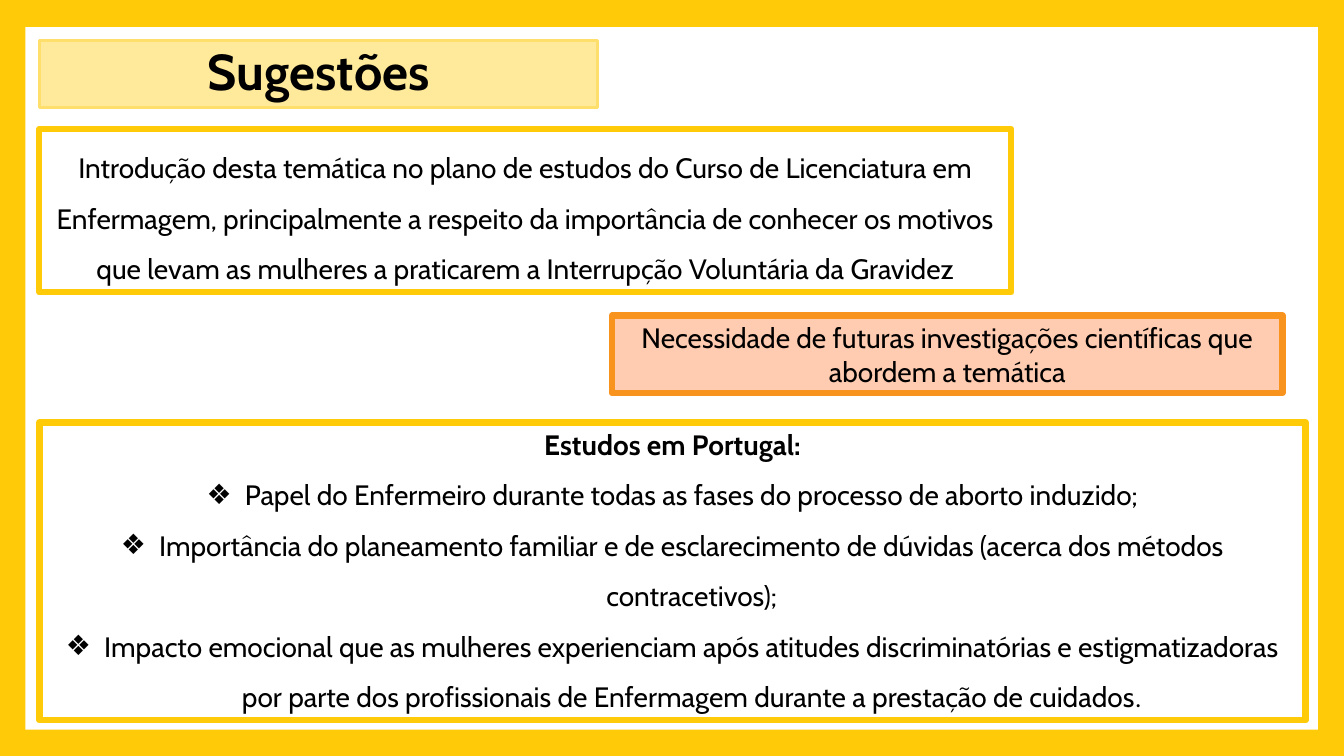
from lxml.etree import SubElement
from pptx import Presentation
from pptx.dml.color import RGBColor
from pptx.enum.shapes import MSO_SHAPE
from pptx.enum.text import MSO_ANCHOR, MSO_AUTO_SIZE, PP_ALIGN
from pptx.oxml.ns import qn
from pptx.util import Inches, Pt

AMBER = RGBColor(0xFF, 0xCA, 0x08)
CREAM = RGBColor(0xFF, 0xEA, 0x9C)
SAND = RGBColor(0xFF, 0xDF, 0x6B)
PEACH = RGBColor(0xFF, 0xCC, 0xB1)
ORANGE = RGBColor(0xF8, 0x93, 0x1D)
WHITE = RGBColor(0xFF, 0xFF, 0xFF)
BLACK = RGBColor(0x00, 0x00, 0x00)

BODY = {"name": "Cabin", "size": Pt(20), "bold": False}
HEADING = BODY | {"bold": True}
TITLE = HEADING | {"size": Pt(36)}
FULL_STOP = BODY | {"name": "Calibri", "size": Pt(18)}

INTRO = ("Introdução desta temática no plano de estudos do Curso de Licenciatura em "
         "Enfermagem, principalmente a respeito da importância de conhecer os motivos "
         "que levam as mulheres a praticarem a Interrupção Voluntária da Gravidez")
NEED = "Necessidade de futuras investigações científicas que abordem a temática"
STUDIES = [
    "Papel do Enfermeiro durante todas as fases do processo de aborto induzido;",
    "Importância do planeamento familiar e de esclarecimento de dúvidas "
    "(acerca dos métodos contracetivos);",
    "Impacto emocional que as mulheres experienciam após atitudes discriminatórias e "
    "estigmatizadoras por parte dos profissionais de Enfermagem durante a prestação "
    "de cuidados",
]


def set_format(obj, values):
    for name, value in values.items():
        setattr(obj, name, value)


def place(sp, prs, left, top, width, height):
    """Position a shape by percentages of the slide's size."""
    w, h = prs.slide_width, prs.slide_height
    set_format(sp, {"left": int(w * left / 100), "top": int(h * top / 100),
                    "width": int(w * width / 100), "height": int(h * height / 100)})


def paint(sp, fill, line=None, weight=4.5):
    sp.fill.solid()
    sp.fill.fore_color.rgb = fill
    if line is None:
        sp.line.fill.background()
    else:
        sp.line.color.rgb = line
        sp.line.width = Pt(weight)


def add_rectangle(prs, slide, share):
    sp = slide.shapes.add_shape(MSO_SHAPE.RECTANGLE, 0, 0, 0, 0)
    sp.shadow.inherit = False
    place(sp, prs, *share)
    return sp


def set_frame(sp, anchor=MSO_ANCHOR.TOP):
    set_format(sp.text_frame, {"word_wrap": True, "vertical_anchor": anchor,
                               "auto_size": MSO_AUTO_SIZE.NONE})


def set_bullet(p, char=None):
    pPr = p._p.get_or_add_pPr()
    indent = Inches(0.38) if char else 0
    pPr.set("marL", str(indent))
    pPr.set("indent", str(-indent))
    if char:
        SubElement(pPr, qn("a:buChar")).set("char", char)
    else:
        SubElement(pPr, qn("a:buNone"))


def write(p, text, font, spacing=1.0):
    set_format(p, {"alignment": PP_ALIGN.CENTER, "line_spacing": spacing,
                   "space_before": Pt(0)})
    r = p.add_run()
    r.text = text
    set_format(r.font, font)
    r.font.color.rgb = BLACK


def add_note(prs, slide, share, fill, line, text, spacing=1.0):
    sp = add_rectangle(prs, slide, share)
    paint(sp, fill, line)
    set_frame(sp)
    write(sp.text_frame.paragraphs[0], text, BODY, spacing)


def fill_title(prs, sp):
    place(sp, prs, 2.93, 5.33, 41.56, 8.93)
    paint(sp, CREAM, SAND, 2.25)
    set_frame(sp, MSO_ANCHOR.MIDDLE)
    write(sp.text_frame.paragraphs[0], "Sugestões", TITLE, 0.9)


def fill_studies(prs, sp):
    place(sp, prs, 2.93, 55.87, 94.22, 39.4)
    paint(sp, WHITE, AMBER)
    set_frame(sp)
    tf = sp.text_frame
    p = tf.paragraphs[0]
    set_bullet(p)
    write(p, "Estudos em Portugal:", HEADING)
    for study in STUDIES:
        p = tf.add_paragraph()
        set_bullet(p, "❖")
        write(p, study, BODY, 1.5)
    write(p, ".", FULL_STOP, 1.5)


def main():
    prs = Presentation()
    prs.slide_width, prs.slide_height = Inches(13.33), Inches(7.5)
    slide = prs.slides.add_slide(prs.slide_layouts[1])
    slide.background.fill.solid()
    slide.background.fill.fore_color.rgb = AMBER

    title, studies = slide.placeholders
    panel = add_rectangle(prs, slide, (1.88, 3.6, 96.17, 92.93))
    paint(panel, WHITE)
    title.element.addprevious(panel.element)

    fill_title(prs, title)
    add_note(prs, slide, (2.93, 17.07, 72.32, 21.6), WHITE, AMBER, INTRO, 1.5)
    add_note(prs, slide, (45.54, 41.73, 49.89, 10.27), PEACH, ORANGE, NEED)
    fill_studies(prs, studies)
    prs.save("out.pptx")


if __name__ == "__main__":
    main()
